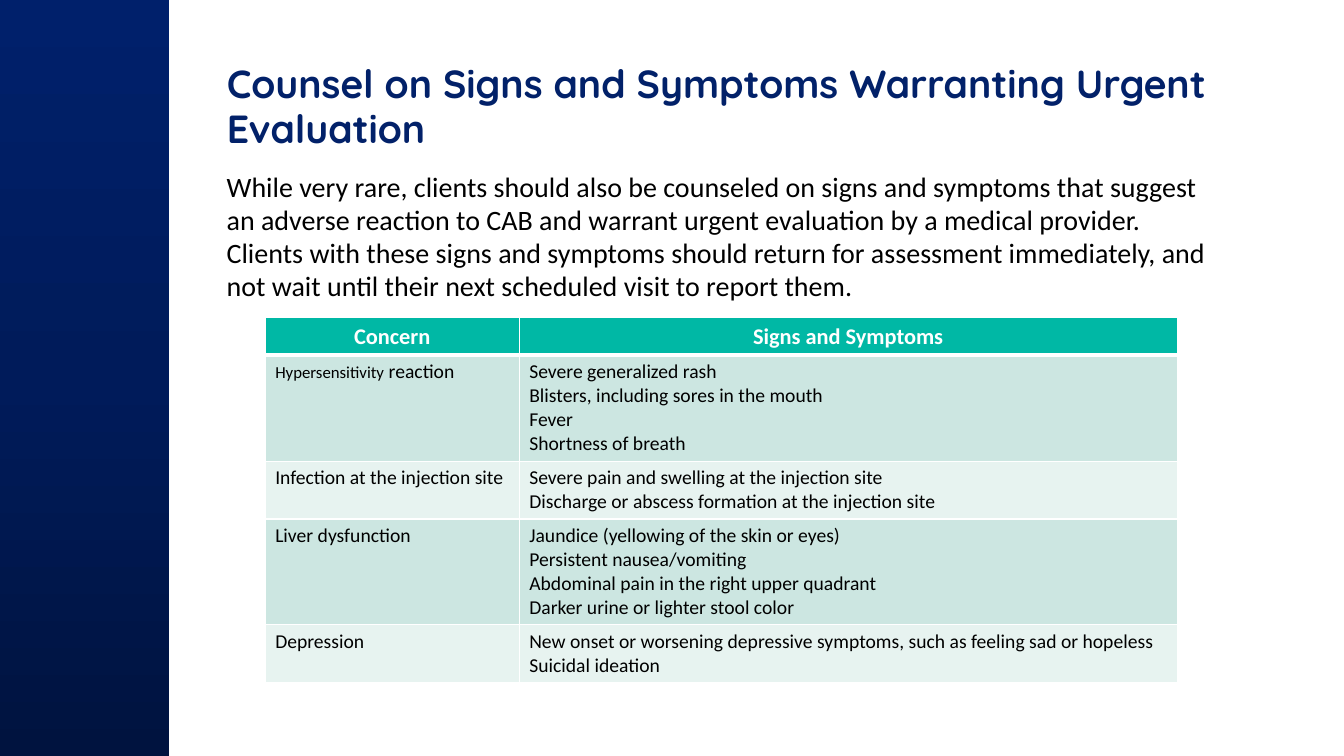
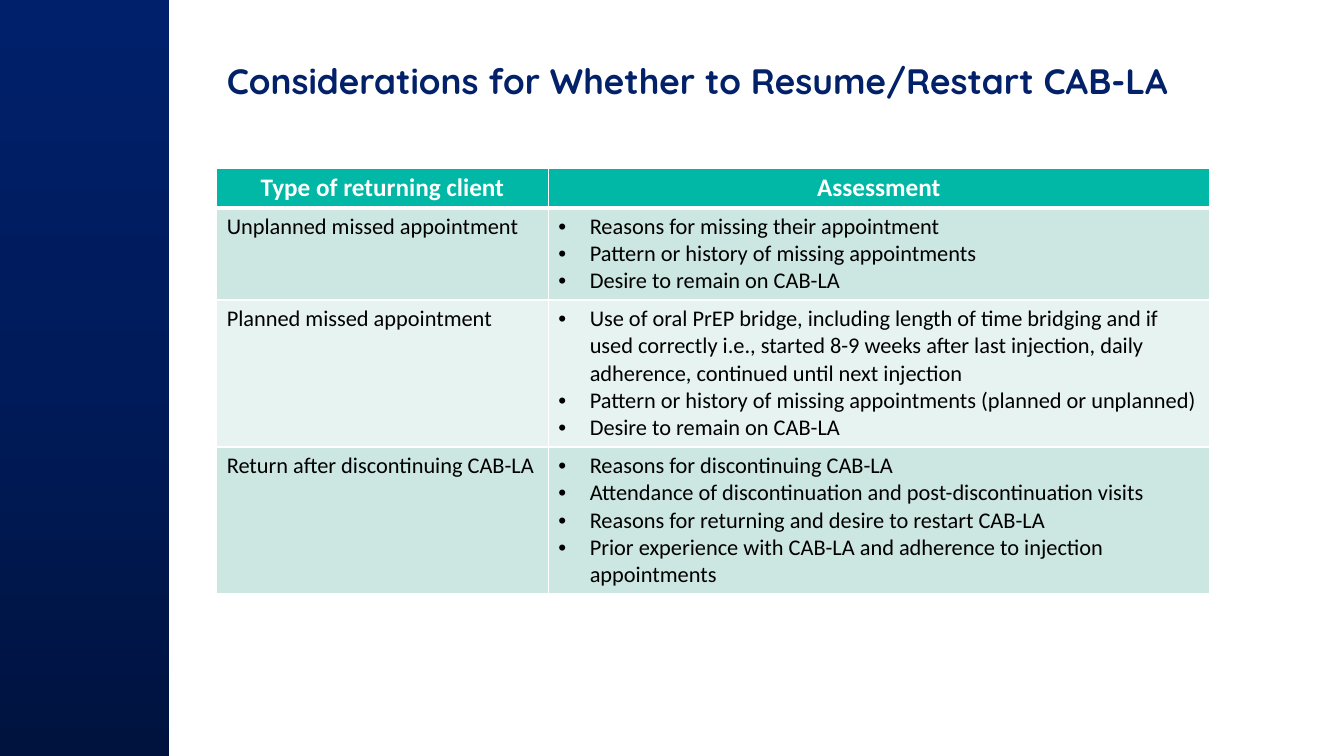
from copy import deepcopy

from lxml.etree import SubElement
from pptx import Presentation
from pptx.dml.color import RGBColor
from pptx.enum.shapes import MSO_SHAPE
from pptx.enum.text import MSO_ANCHOR, MSO_AUTO_SIZE, PP_ALIGN
from pptx.oxml.ns import qn
from pptx.util import Pt

NAVY = RGBColor(0x02, 0x21, 0x69)
TEAL = RGBColor(0x00, 0xB8, 0xA5)
MINT = RGBColor(0xCC, 0xE6, 0xE1)
PALE = RGBColor(0xE7, 0xF3, 0xF0)
WHITE = RGBColor(0xFF, 0xFF, 0xFF)
BLACK = RGBColor(0x00, 0x00, 0x00)
BAND_STOPS = [
    (0, RGBColor(0x00, 0x13, 0x3F)),
    (0.5, RGBColor(0x00, 0x1B, 0x5A)),
    (1, RGBColor(0x00, 0x20, 0x6B)),
]
TITLE_FONT, BODY_FONT = "Quicksand", "Calibri"
CONTENT_LEFT, CONTENT_WIDTH = Pt(154.8), Pt(720)
BULLET_INDENT = Pt(22.5)

presentation = Presentation()
presentation.slide_width, presentation.slide_height = Pt(960), Pt(540)
title_only = presentation.slide_layouts[5]


def format_runs(paragraph, size, color, font=BODY_FONT, bold=False):
    for run in paragraph.runs:
        run.font.name, run.font.size, run.font.bold = font, Pt(size), bold
        run.font.color.rgb = color


def set_border(cell, side, width):
    """Draw one white cell edge; side is L, R, T or B, given in that order."""
    line = SubElement(cell._tc.get_or_add_tcPr(), qn(f"a:ln{side}"), w=str(Pt(width)))
    fill = SubElement(line, qn("a:solidFill"))
    SubElement(fill, qn("a:srgbClr"), val=str(WHITE))


slide_contents = [
    {
        "title": "Counsel on Signs and Symptoms Warranting Urgent Evaluation",
        "title_size": 28,
        "intro": "While very rare, clients should also be counseled on signs and symptoms "
                 "that suggest an adverse reaction to CAB and warrant urgent evaluation by "
                 "a medical provider. Clients with these signs and symptoms should return "
                 "for assessment immediately, and not wait until their next scheduled visit "
                 "to report them.",
        "table_at": (189.4, 226.8),
        "columns": (181.5, 470),
        "row_heights": (27, 75.6, 41.4, 75.6, 41.4),
        "text_size": 14,
        "bulleted": False,
        "header": ("Concern", "Signs and Symptoms"),
        "rows": [
            ("Hypersensitivity reaction",
             ["Severe generalized rash", "Blisters, including sores in the mouth",
              "Fever", "Shortness of breath"]),
            ("Infection at the injection site",
             ["Severe pain and swelling at the injection site",
              "Discharge or abscess formation at the injection site"]),
            ("Liver dysfunction",
             ["Jaundice (yellowing of the skin or eyes)", "Persistent nausea/vomiting",
              "Abdominal pain in the right upper quadrant",
              "Darker urine or lighter stool color"]),
            ("Depression",
             ["New onset or worsening depressive symptoms, such as feeling sad or hopeless",
              "Suicidal ideation"]),
        ],
    },
    {
        "title": "Considerations for Whether to Resume/Restart CAB-LA",
        "title_size": 25.2,
        "intro": None,
        "table_at": (154.8, 120.4),
        "columns": (236.8, 472.3),
        "row_heights": (28, 65.8, 104.8, 104.8),
        "text_size": 16,
        "bulleted": True,
        "header": ("Type of returning client", "Assessment"),
        "rows": [
            ("Unplanned missed appointment",
             ["Reasons for missing their appointment",
              "Pattern or history of missing appointments", "Desire to remain on CAB-LA"]),
            ("Planned missed appointment",
             ["Use of oral PrEP bridge, including length of time bridging and if used "
              "correctly i.e., started 8-9 weeks after last injection, daily adherence, "
              "continued until next injection",
              "Pattern or history of missing appointments (planned or unplanned)",
              "Desire to remain on CAB-LA"]),
            ("Return after discontinuing CAB-LA",
             ["Reasons for discontinuing CAB-LA",
              "Attendance of discontinuation and post-discontinuation visits",
              "Reasons for returning and desire to restart CAB-LA",
              "Prior experience with CAB-LA and adherence to injection appointments"]),
        ],
    },
]

tables = []
for content in slide_contents:
    slide = presentation.slides.add_slide(title_only)

    # Side band
    band = slide.shapes.add_shape(MSO_SHAPE.RECTANGLE, 0, 0, Pt(121), Pt(540))
    band.shadow.inherit = False
    band.line.fill.background()
    band.fill.gradient()
    band.fill.gradient_angle = 90
    stop_list = band._element.spPr.find(".//" + qn("a:gsLst"))
    stop_list.append(deepcopy(stop_list[-1]))
    for stop, (position, color) in zip(band.fill.gradient_stops, BAND_STOPS):
        stop.position = position
        stop.color.rgb = color

    # Title
    title = slide.shapes.title
    title.left, title.top, title.width, title.height = CONTENT_LEFT, Pt(41), CONTENT_WIDTH, Pt(66)
    title.text_frame.text = content["title"]
    title.text_frame.word_wrap = True
    title.text_frame.auto_size = MSO_AUTO_SIZE.NONE
    title.text_frame.vertical_anchor = MSO_ANCHOR.TOP
    paragraph = title.text_frame.paragraphs[0]
    paragraph.alignment = PP_ALIGN.LEFT
    paragraph.line_spacing = 0.96
    format_runs(paragraph, content["title_size"], NAVY, TITLE_FONT, bold=True)

    # Introduction
    if content["intro"]:
        intro = slide.shapes.add_textbox(CONTENT_LEFT, Pt(119), CONTENT_WIDTH, Pt(105))
        intro.text_frame.word_wrap = True
        intro.text_frame.text = content["intro"]
        paragraph = intro.text_frame.paragraphs[0]
        paragraph.line_spacing = 0.98
        format_runs(paragraph, 20, BLACK)

    # Table
    left, top = content["table_at"]
    columns, row_heights = content["columns"], content["row_heights"]
    table = slide.shapes.add_table(
        len(row_heights), len(columns), Pt(left), Pt(top),
        Pt(sum(columns)), Pt(sum(row_heights))).table
    tables.append(table)
    for column, width in zip(table.columns, columns):
        column.width = Pt(width)
    for row, height in zip(table.rows, row_heights):
        row.height = Pt(height)

    for row_index, texts in enumerate([content["header"], *content["rows"]]):
        is_header = row_index == 0
        for column_index, text in enumerate(texts):
            cell = table.cell(row_index, column_index)
            for side in "LRTB":
                header_edge = (side == "B" and is_header) or (side == "T" and row_index == 1)
                set_border(cell, side, 3 if header_edge else 1)
            cell.fill.solid()
            cell.fill.fore_color.rgb = TEAL if is_header else (PALE, MINT)[row_index % 2]
            cell.text_frame.text = text if isinstance(text, str) else "\n".join(text)
            if is_header:
                cell.vertical_anchor = MSO_ANCHOR.MIDDLE
                cell.margin_left = cell.margin_right = Pt(5)
                cell.margin_top = cell.margin_bottom = Pt(3)
            for paragraph in cell.text_frame.paragraphs:
                if is_header:
                    paragraph.alignment = PP_ALIGN.CENTER
                    format_runs(paragraph, content["text_size"] + 2, WHITE, bold=True)
                    continue
                if content["bulleted"] and column_index == 1:
                    properties = paragraph._p.get_or_add_pPr()
                    properties.set("marL", str(BULLET_INDENT))
                    properties.set("indent", str(-BULLET_INDENT))
                    SubElement(properties, qn("a:buFont"), typeface="Arial")
                    SubElement(properties, qn("a:buChar"), char="•")
                format_runs(paragraph, content["text_size"], BLACK)

# The first concern opens with a smaller word
paragraph = tables[0].cell(1, 0).text_frame.paragraphs[0]
paragraph.runs[0].text = "Hypersensitivity"
paragraph.add_run().text = " reaction"
format_runs(paragraph, 14, BLACK)
paragraph.runs[0].font.size = Pt(12)

presentation.save("out.pptx")
